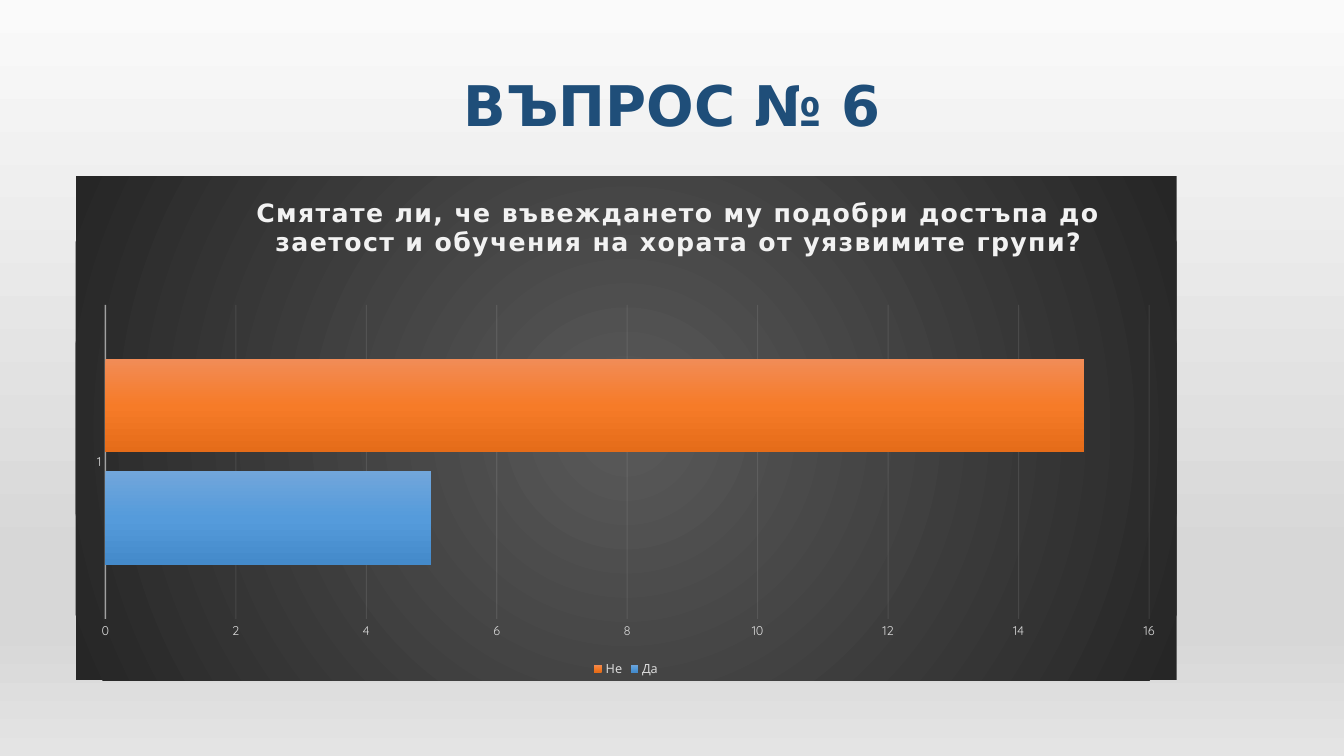
import dataclasses

import lxml.etree
import pptx
import pptx.chart.data
import pptx.dml.color
import pptx.enum.chart
import pptx.enum.text
import pptx.oxml.ns
import pptx.util

qn = pptx.oxml.ns.qn


@dataclasses.dataclass(frozen=True)
class Theme:
    heading_font: str = "DejaVu Sans"
    label_font: str = "Quicksand"
    heading_size: int = 40
    question_size: int = 18
    chart_size: int = 10
    label_size: int = 9
    heading: str = "1F4E79"
    question: str = "F2F2F2"
    label: str = "D9D9D9"
    rule: str = "F2F2F2"
    backdrop: tuple = ((0, "FAFAFA"), (74, "D7D7D7"), (83, "D7D7D7"), (100, "E4E4E4"))
    panel: tuple = ((0, "595959"), (100, "262626"))
    yes: tuple = ((0, "71A6DB"), (50, "559BDB"), (100, "448ACA"))
    no: tuple = ((0, "F18C57"), (50, "F67B28"), (100, "E56C19"))


THEME = Theme()
HEADING = "ВЪПРОС № 6"
QUESTION = ("Смятате ли, че въвеждането му подобри достъпа до "
            "заетост и обучения на хората от уязвимите групи?")
ANSWERS = (("Да", 5, THEME.yes), ("Не", 15, THEME.no))


def add_node(parent, tag, **attributes):
    return lxml.etree.SubElement(parent, qn(tag), {k: str(v) for k, v in attributes.items()})


def gradient(stops, radial=False):
    fill = lxml.etree.Element(qn("a:gradFill"), rotWithShape="1")
    stop_list = add_node(fill, "a:gsLst")
    for share, color in stops:
        add_node(add_node(stop_list, "a:gs", pos=share * 1000), "a:srgbClr", val=color)
    if radial:
        focus = dict.fromkeys("ltrb", 50000)
        add_node(add_node(fill, "a:path", path="circle"), "a:fillToRect", **focus)
    else:
        add_node(fill, "a:lin", ang=5400000, scaled=0)
    return fill


def shade(holder, stops):
    solid = holder.find(qn("a:solidFill"))
    holder.replace(solid, gradient(stops))


def style_font(font, family, size, color, bold=False):
    font.name = family
    font.size = pptx.util.Pt(size)
    font.bold = bold
    font.color.rgb = pptx.dml.color.RGBColor.from_string(color)


def style_rule(line, holder, width, opacity):
    line.width = pptx.util.Pt(width)
    line.color.rgb = pptx.dml.color.RGBColor.from_string(THEME.rule)
    color = next(holder.find(qn("c:spPr")).iter(qn("a:srgbClr")))
    add_node(color, "a:alpha", val=opacity * 1000)


def set_layout(holder, index, **shares):
    for old in holder.findall(qn("c:layout")):
        holder.remove(old)
    layout = lxml.etree.Element(qn("c:layout"))
    manual = add_node(layout, "c:manualLayout")
    if "w" in shares:
        add_node(manual, "c:layoutTarget", val="inner")
    for side in "xy":
        add_node(manual, f"c:{side}Mode", val="edge")
    for side, share in shares.items():
        add_node(manual, f"c:{side}", val=share)
    holder.insert(index, layout)


def fill_heading(heading, box):
    heading.left, heading.top, heading.width, heading.height = box
    frame = heading.text_frame
    frame.text = HEADING
    frame.auto_size = pptx.enum.text.MSO_AUTO_SIZE.NONE
    frame.vertical_anchor = pptx.enum.text.MSO_ANCHOR.BOTTOM
    paragraph = frame.paragraphs[0]
    paragraph.alignment = pptx.enum.text.PP_ALIGN.CENTER
    paragraph.line_spacing = 0.9
    style_font(paragraph.runs[0].font, THEME.heading_font, THEME.heading_size,
               THEME.heading, bold=True)


def style_question(chart):
    chart.has_title = True
    frame = chart.chart_title.text_frame
    frame.text = QUESTION
    style_font(frame.paragraphs[0].runs[0].font, THEME.heading_font,
               THEME.question_size, THEME.question, bold=True)
    question = next(chart.element.iter(qn("c:title")))
    for run_style in question.iter(qn("a:rPr")):
        run_style.set("spc", "100")
    set_layout(question, 1, x=0.16, y=0.03)


def style_axes(chart):
    answers, votes = chart.category_axis, chart.value_axis
    for axis in (answers, votes):
        axis.major_tick_mark = axis.minor_tick_mark = pptx.enum.chart.XL_TICK_MARK.NONE
        style_font(axis.tick_labels.font, THEME.label_font, THEME.label_size, THEME.label)
    votes.minimum_scale, votes.maximum_scale, votes.major_unit = 0, 16, 2
    votes.format.line.fill.background()
    votes.has_major_gridlines = True
    style_rule(answers.format.line, next(chart.element.iter(qn("c:catAx"))), 1, 54)
    gridlines = votes.major_gridlines.format.line
    style_rule(gridlines, next(chart.element.iter(qn("c:majorGridlines"))), 0.75, 10)


def style_bars(chart):
    plot = chart.plots[0]
    plot.gap_width = 115
    plot.overlap = -20
    plot.vary_by_categories = False
    bars = chart.element.iter(qn("c:ser"))
    for series, bar, (_, _, stops) in zip(plot.series, bars, ANSWERS):
        series.format.fill.solid()
        series.invert_if_negative = False
        shade(bar.find(qn("c:spPr")), stops)


def add_answers(slide, box):
    data = pptx.chart.data.CategoryChartData()
    data.categories = ["1"]
    for name, votes, _ in ANSWERS:
        data.add_series(name, [votes])
    kind = pptx.enum.chart.XL_CHART_TYPE.BAR_CLUSTERED
    chart = slide.shapes.add_chart(kind, *box, data).chart
    chart.font.name = THEME.label_font
    chart.font.size = pptx.util.Pt(THEME.chart_size)

    panel = lxml.etree.Element(qn("c:spPr"))
    panel.append(gradient(THEME.panel, radial=True))
    add_node(add_node(panel, "a:ln"), "a:noFill")
    chart.element.find(qn("c:chart")).addnext(panel)

    style_question(chart)
    style_axes(chart)
    style_bars(chart)
    plot_area = next(chart.element.iter(qn("c:plotArea")))
    set_layout(plot_area, 0, x=0.027, y=0.255, w=0.948, h=0.623)

    chart.has_legend = True
    chart.legend.position = pptx.enum.chart.XL_LEGEND_POSITION.BOTTOM
    chart.legend.include_in_layout = False
    style_font(chart.legend.font, THEME.label_font, THEME.label_size, THEME.label)


def build_question_slide(deck):
    slide = deck.slides.add_slide(deck.slide_layouts[5])
    slide.background.fill.solid()
    shade(next(slide.element.iter(qn("p:bgPr"))), THEME.backdrop)

    def box(left, top, width, height):
        across, down = deck.slide_width, deck.slide_height
        return (int(left * across), int(top * down), int(width * across), int(height * down))

    fill_heading(slide.shapes.title, box(0.1, 0.04, 0.8, 0.15))
    add_answers(slide, box(0.75 / 13.33, 1.75 / 7.5, 10.92 / 13.33, 5 / 7.5))


def main():
    deck = pptx.Presentation()
    deck.slide_width = pptx.util.Inches(13.33)
    deck.slide_height = pptx.util.Inches(7.5)
    build_question_slide(deck)
    deck.save("out.pptx")


if __name__ == "__main__":
    main()
